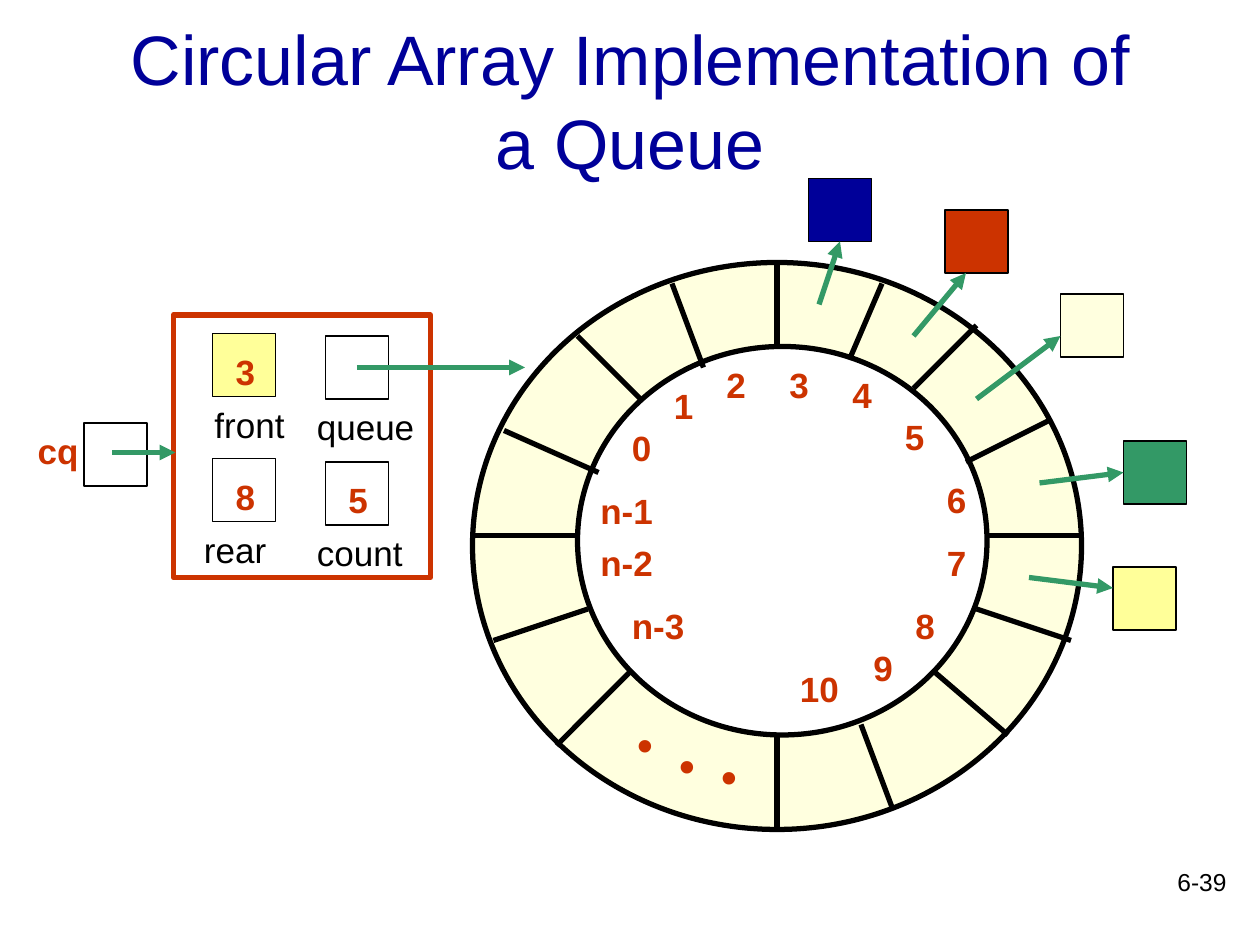
from lxml.etree import SubElement
from pptx import Presentation
from pptx.dml.color import RGBColor
from pptx.enum.shapes import MSO_CONNECTOR, MSO_SHAPE
from pptx.enum.text import MSO_ANCHOR, PP_ALIGN
from pptx.oxml.ns import qn
from pptx.util import Inches, Pt

COLORS = {
    "black": "000000", "white": "FFFFFF", "navy": "000099", "red": "CC3300",
    "cream": "FFFFDF", "yellow": "FFFF99", "green": "339966",
}

# All positions are columns and rows of a 120 x 90 grid, 12 cells to the inch.
CELLS_PER_INCH = 12
BOX = 6
LINE_HEIGHT = 5.2

TITLE = "Circular Array Implementation of a Queue"
PAGE = "6-39"

RING = [((45, 25, 58, 54), "cream"), ((55, 33, 39, 37), "white")]
DIVIDERS = [
    ((55, 51), (45, 51)), ((94, 51), (103, 51)), ((74, 25), (74, 33)),
    ((74, 70), (74, 79)), ((55, 32), (61, 38)), ((89, 64), (96, 70)),
    ((60, 64), (53, 71)), ((93, 31), (87, 37)), ((64, 27), (67, 35)),
    ((82, 69), (85, 77)), ((48, 41), (57, 45)), ((93, 58), (102, 61)),
    ((84, 27), (81, 34)), ((100, 40), (92, 44)), ((47, 61), (56, 58)),
]
INDICES = [
    ("0", 59, 40), ("1", 63, 36), ("2", 68, 34), ("3", 74, 34), ("4", 80, 35),
    ("5", 85, 39), ("6", 89, 45), ("7", 89, 51), ("8", 86, 57), ("9", 82, 61),
    ("10", 75, 63), ("n-1", 56, 46), ("n-2", 56, 51), ("n-3", 59, 57),
]
ELLIPSIS = [(59, 61), (63, 63), (67, 64)]

# Queue elements: box corner, colour, arrow start in the ring, arrow end
ELEMENTS = [
    ((77, 17), "navy", (78, 29), (80, 23)),
    ((90, 20), "red", (87, 32), (92, 26)),
    ((101, 28), "cream", (93, 38), (101, 32)),
    ((107, 42), "green", (99, 46), (107, 45)),
    ((106, 54), "yellow", (98, 55), (106, 56)),
]

PANEL = (16.5, 30, 24.5, 25)
# Fields: label, label shift from the box, value, box corner, fill
FIELDS = [
    ("front", -1, "3", (20.25, 31.8), "yellow"),
    ("rear", -2, "8", (20.25, 43.7), None),
    ("queue", -2, "", (31, 32), None),
    ("count", -2, "5", (31, 44), None),
]
QUEUE_ARROW = ((34, 35), (50, 35))
CQ_ROW = 40.3
CQ_ARROW = ((10.7, 43.1), (16.7, 43.1))


def grid(*cells):
    return [Inches(cell / CELLS_PER_INCH) for cell in cells]


def color(name):
    return RGBColor.from_string(COLORS[name])


def add_outline(slide, kind, place, fill=None, line="black", weight=0.75):
    shape = slide.shapes.add_shape(kind, *grid(*place))
    shape.shadow.inherit = False
    if fill:
        shape.fill.solid()
        shape.fill.fore_color.rgb = color(fill)
    else:
        shape.fill.background()
    shape.line.color.rgb = color(line)
    shape.line.width = Pt(weight)


def add_box(slide, corner, fill=None):
    add_outline(slide, MSO_SHAPE.RECTANGLE, (*corner, BOX, BOX), fill)


def add_line(slide, start, end, line="black", arrow=False):
    connector = slide.shapes.add_connector(
        MSO_CONNECTOR.STRAIGHT, *grid(*start, *end))
    connector.line.color.rgb = color(line)
    connector.line.width = Pt(3)
    if arrow:
        SubElement(connector.line._get_or_add_ln(), qn("a:tailEnd"), type="triangle")
    SubElement(connector._element.spPr, qn("a:effectLst"))


def add_arrow(slide, start, end):
    add_line(slide, start, end, "green", arrow=True)


def add_text(slide, text, place, size=20, ink="black", bold=False, font="Arial",
             align=PP_ALIGN.LEFT, anchor=MSO_ANCHOR.TOP):
    frame = slide.shapes.add_textbox(*grid(*place)).text_frame
    frame.word_wrap = True
    frame.vertical_anchor = anchor
    paragraph = frame.paragraphs[0]
    paragraph.alignment = align
    run = paragraph.add_run()
    run.text = text
    run.font.name = font
    run.font.size = Pt(size)
    run.font.bold = bold
    run.font.color.rgb = color(ink)


def add_mark(slide, text, column, row):
    """Bold red number or name; longer ones get a wider box."""
    width = 2.5 + 2.2 * len(text)
    add_text(slide, text, (column, row, width, LINE_HEIGHT), ink="red", bold=True)


def draw_ring(slide):
    for place, fill in RING:
        add_outline(slide, MSO_SHAPE.OVAL, place, fill, weight=3)
    for start, end in DIVIDERS:
        add_line(slide, start, end)
    for index in INDICES:
        add_mark(slide, *index)
    for column, row in ELLIPSIS:
        add_text(slide, ".", (column, row, 4, 13.2), 60, "red",
                 font="Times New Roman")
    for corner, fill, start, end in ELEMENTS:
        add_box(slide, corner, fill)
        add_arrow(slide, start, end)


def draw_panel(slide):
    add_outline(slide, MSO_SHAPE.RECTANGLE, PANEL, line="red", weight=3)
    for label, shift, value, (column, row), fill in FIELDS:
        add_box(slide, (column, row), fill)
        add_text(slide, label, (column + shift, row + BOX, 12, LINE_HEIGHT))
        if value:
            add_mark(slide, value, column + 1, row + 1)
    add_arrow(slide, *QUEUE_ARROW)
    add_mark(slide, "cq", 2.4, CQ_ROW)
    add_box(slide, (8, CQ_ROW))
    add_arrow(slide, *CQ_ARROW)


def main():
    deck = Presentation()
    deck.slide_width, deck.slide_height = grid(120, 90)
    slide = deck.slides.add_slide(deck.slide_layouts[6])
    add_text(slide, TITLE, (9, 2, 102, 15), 40, "navy",
             align=PP_ALIGN.CENTER, anchor=MSO_ANCHOR.MIDDLE)
    draw_ring(slide)
    draw_panel(slide)
    add_text(slide, PAGE, (93, 82, 25, 6), 14, align=PP_ALIGN.RIGHT)
    deck.save("out.pptx")


if __name__ == "__main__":
    main()
